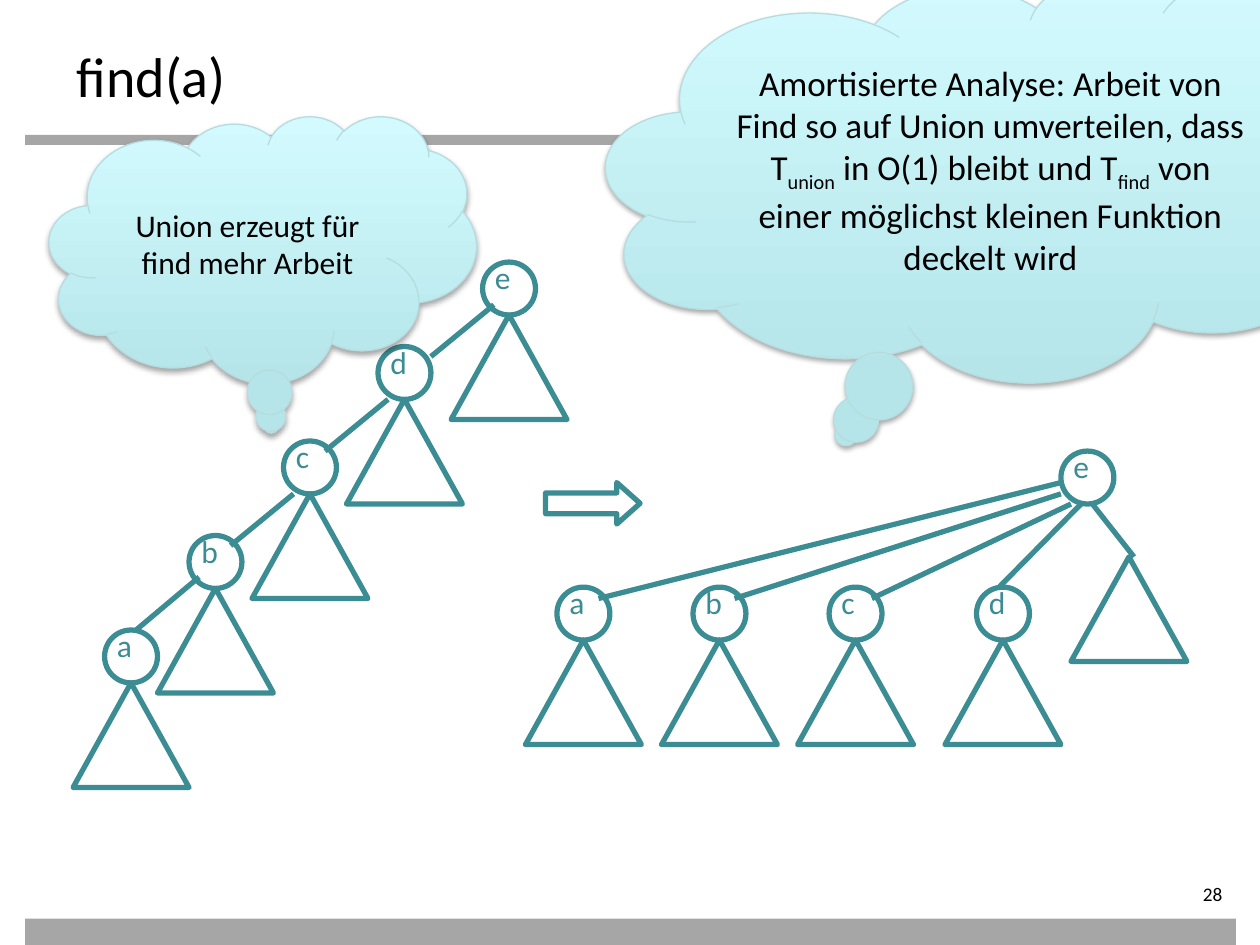
from lxml.etree import SubElement
from pptx import Presentation
from pptx.dml.color import RGBColor
from pptx.enum.shapes import MSO_CONNECTOR as Connector, MSO_SHAPE as Shape
from pptx.enum.text import MSO_ANCHOR as Anchor, PP_ALIGN as Align
from pptx.oxml.ns import qn
from pptx.util import Inches, Pt

COLORS = {
    "teal": "3C8C93",
    "gray": "A6A6A6",
    "black": "000000",
    "cloud_bottom": "B5E5E9",
    "cloud_top": "D3FBFF",
    "cloud_line": "B6DCDF",
}
FONT = "Calibri"
NODE_SIZE = 0.42
TREE_WIDTH, TREE_HEIGHT = 0.92, 0.83

CHAIN_NODES = [("a", 0.83, 5), ("b", 1.5, 4.25), ("c", 2.25, 3.5), ("d", 3, 2.75), ("e", 3.83, 2.08)]
CHAIN_EDGES = [
    (1.08, 5, 1.58, 4.58),
    (1.83, 4.33, 2.33, 3.92),
    (2.58, 3.58, 3.08, 3.17),
    (3.42, 2.83, 3.92, 2.42),
]
FLAT_TOP = 4.66
FLAT_NODES = [("d", 7.75), ("c", 6.58), ("b", 5.5), ("a", 4.42)]
FLAT_EDGES = [
    (4.75, 4.75, 8.42, 3.83),
    (5.83, 4.75, 8.42, 3.92),
    (6.92, 4.75, 8.5, 4),
    (7.92, 4.67, 8.58, 4),
    (9, 4.42, 8.67, 4),
]


def color(name):
    return RGBColor.from_string(COLORS[name])


class SlideBuilder:
    def __init__(self, slide):
        self.slide = slide
        self.target = slide.shapes

    def start_group(self):
        self.target = self.slide.shapes.add_group_shape().shapes

    def end_group(self):
        self.target = self.slide.shapes

    def add_preset(self, kind, left, top, width, height):
        shape = self.target.add_shape(kind, Inches(left), Inches(top), Inches(width), Inches(height))
        shape.shadow.inherit = False
        return shape

    def bar(self, top, height):
        shape = self.add_preset(Shape.RECTANGLE, 0.2, top, 9.61, height)
        shape.fill.solid()
        shape.fill.fore_color.rgb = color("gray")
        shape.line.fill.background()

    def outline(self, kind, left, top, width, height):
        shape = self.add_preset(kind, left, top, width, height)
        shape.fill.background()
        shape.line.color.rgb = color("teal")
        shape.line.width = Pt(3)
        return shape

    def edge(self, x1, y1, x2, y2):
        line = self.target.add_connector(Connector.STRAIGHT, Inches(x1), Inches(y1), Inches(x2), Inches(y2))
        line.line.color.rgb = color("teal")
        line.line.width = Pt(3)
        SubElement(line._element.spPr, qn("a:effectLst"))

    def add_runs(self, frame, runs, size, color_name="black", align=Align.LEFT):
        paragraph = frame.paragraphs[0]
        paragraph.alignment = align
        for text, subscript in runs:
            run = paragraph.add_run()
            run.text = text
            run.font.name = FONT
            run.font.size = Pt(size)
            run.font.color.rgb = color(color_name)
            if subscript:
                run._r.get_or_add_rPr().set("baseline", "-25000")

    def text(self, text, left, top, width, height, size, color_name="black", wrap=True):
        box = self.target.add_textbox(Inches(left), Inches(top), Inches(width), Inches(height))
        box.text_frame.word_wrap = wrap
        self.add_runs(box.text_frame, [(text, False)], size, color_name)
        return box

    def page_number(self, number):
        frame = self.text(number, 8.7, 7, 1.1, 0.22, 11).text_frame
        frame.margin_left = frame.margin_top = frame.margin_bottom = 0
        frame.paragraphs[0].alignment = Align.RIGHT

    def node(self, letter, left, top, tree_dx=-0.25, tree_dy=NODE_SIZE):
        self.outline(Shape.ISOSCELES_TRIANGLE, left + tree_dx, top + tree_dy, TREE_WIDTH, TREE_HEIGHT)
        self.outline(Shape.OVAL, left, top, NODE_SIZE, NODE_SIZE)
        self.text(letter, left, top - 0.08, 0.33, 0.4, 18, "teal", wrap=False)

    def cloud(self, left, top, width, height, tail, runs, size):
        shape = self.add_preset(Shape.CLOUD_CALLOUT, left, top, width, height)
        shape.adjustments[0], shape.adjustments[1] = tail
        shape.fill.gradient()
        shape.fill.gradient_angle = 90
        for stop, name in zip(shape.fill.gradient_stops, ("cloud_bottom", "cloud_top")):
            stop.color.rgb = color(name)
        shape.line.color.rgb = color("cloud_line")
        shape.line.width = Pt(0.75)
        effects = shape._element.spPr.find(qn("a:effectLst"))
        shadow = SubElement(effects, qn("a:outerShdw"), blurRad=str(Pt(3.1)), dist=str(Pt(1.8)),
                            dir="5400000", rotWithShape="0")
        shade = SubElement(shadow, qn("a:srgbClr"), val=COLORS["black"])
        SubElement(shade, qn("a:alpha"), val="35000")
        shape.text_frame.word_wrap = True
        shape.text_frame.vertical_anchor = Anchor.MIDDLE
        self.add_runs(shape.text_frame, runs, size, align=Align.CENTER)


def main():
    presentation = Presentation()
    presentation.slide_width, presentation.slide_height = Inches(10), Inches(7.5)
    builder = SlideBuilder(presentation.slides.add_slide(presentation.slide_layouts[6]))

    builder.bar(1.07, 0.08)
    builder.bar(7.29, 0.21)
    builder.page_number("28")
    builder.text("find(a)", 0.51, 0.28, 9, 0.55, 32)

    for letter, left, top in CHAIN_NODES:
        builder.start_group()
        builder.node(letter, left, top)
    builder.end_group()
    for points in CHAIN_EDGES:
        builder.edge(*points)

    builder.start_group()
    builder.node("e", 8.42, 3.58, tree_dx=0.08, tree_dy=0.84)
    for letter, left in FLAT_NODES:
        builder.node(letter, left, FLAT_TOP)
    for points in FLAT_EDGES:
        builder.edge(*points)
    builder.end_group()

    arrow = builder.outline(Shape.RIGHT_ARROW, 4.33, 3.83, 0.75, 0.33)
    arrow.adjustments[1] = 0.56

    builder.cloud(4.81, -0.19, 6.57, 3.22, (-0.21, 0.63), [
        ("Amortisierte Analyse: Arbeit von Find so auf Union umverteilen, dass T", False),
        ("union", True),
        (" in O(1) bleibt und T", False),
        ("find", True),
        (" von einer möglichst kleinen Funktion deckelt wird", False),
    ], 20)
    builder.cloud(0.39, 0.92, 3.39, 2.12, (0.02, 0.66),
                  [("Union erzeugt für find mehr Arbeit", False)], 18)

    presentation.save("out.pptx")


if __name__ == "__main__":
    main()
